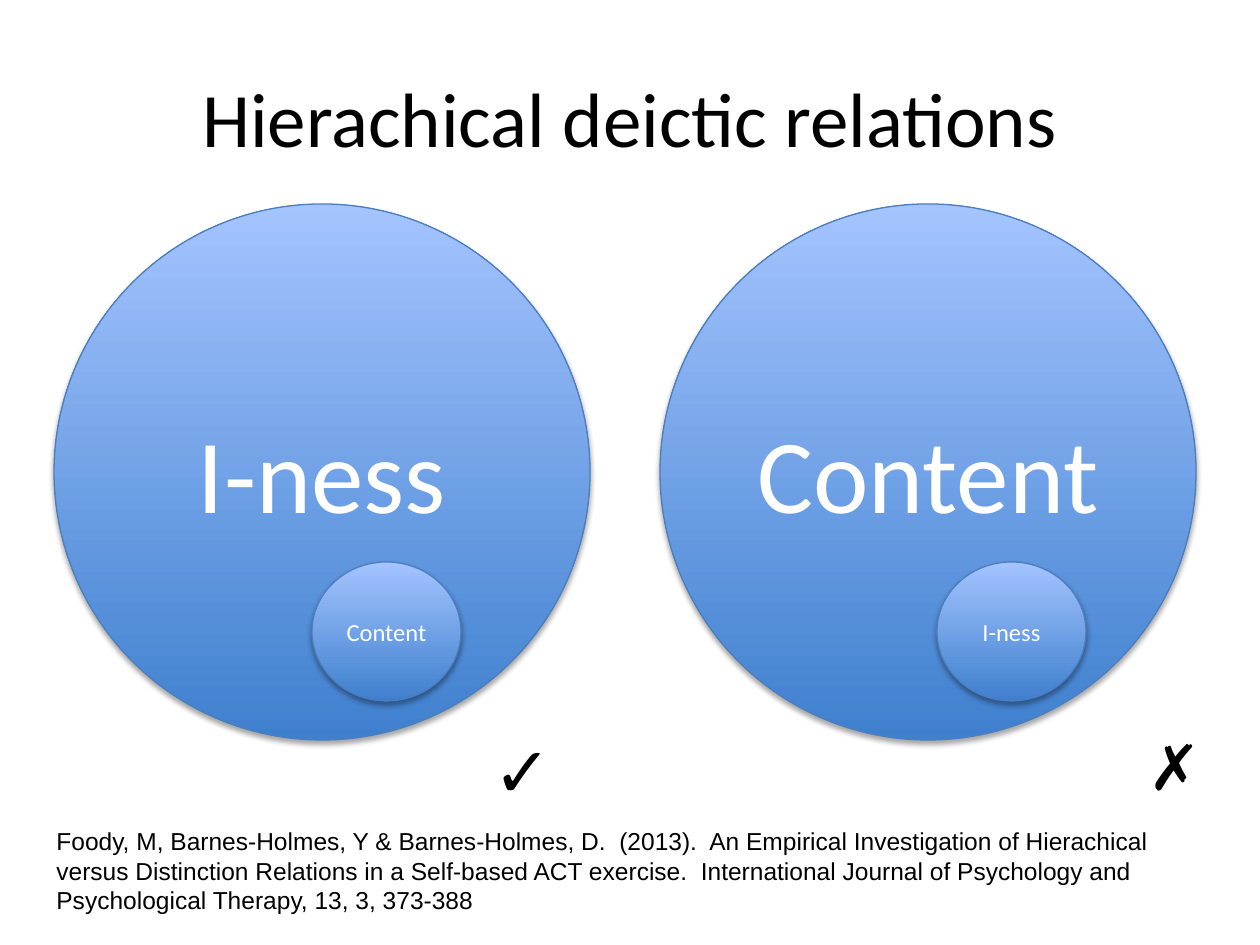
from lxml import etree
from pptx import Presentation
from pptx import util as u
from pptx.dml.color import RGBColor
from pptx.enum import shapes, text
from pptx.oxml import ns

EMU_PER_PX = 914400 / 126
BLACK = RGBColor(0x00, 0x00, 0x00)
WHITE = RGBColor(0xFF, 0xFF, 0xFF)
DEEP_BLUE = RGBColor(0x3F, 0x80, 0xCE)
PALE_BLUE = RGBColor(0xA4, 0xC4, 0xFF)
EDGE_BLUE = RGBColor(0x4B, 0x7E, 0xBC)

CITATION = (
    "Foody, M, Barnes-Holmes, Y & Barnes-Holmes, D.  (2013).  "
    "An Empirical Investigation of Hierachical versus Distinction Relations "
    "in a Self-based ACT exercise.  International Journal of Psychology and "
    "Psychological Therapy, 13, 3, 373-388"
)


def px(*lengths):
    return [u.Emu(round(length * EMU_PER_PX)) for length in lengths]


def write(frame, wording, size, font, color, align, anchor):
    frame.vertical_anchor = anchor
    paragraph = frame.paragraphs[0]
    paragraph.alignment = align
    run = paragraph.add_run()
    run.text = wording
    run.font.size = u.Pt(size)
    run.font.name = font
    run.font.color.rgb = color


def add_label(slide, box, wording, size, font="Arial", wrap=True,
              align=text.PP_ALIGN.LEFT, anchor=text.MSO_ANCHOR.TOP):
    label = slide.shapes.add_textbox(*px(*box))
    label.text_frame.word_wrap = wrap
    write(label.text_frame, wording, size, font, BLACK, align, anchor)


def add_drop_shadow(shape):
    shape.shadow.inherit = False
    effects = shape._element.spPr.find(ns.qn("a:effectLst"))
    shadow = etree.SubElement(
        effects, ns.qn("a:outerShdw"), blurRad=str(u.Pt(3.1)),
        dist=str(u.Pt(1.8)), dir="5400000", rotWithShape="0")
    tint = etree.SubElement(shadow, ns.qn("a:srgbClr"), val="000000")
    etree.SubElement(tint, ns.qn("a:alpha"), val="35000")


def add_circle(slide, box, wording, size):
    circle = slide.shapes.add_shape(shapes.MSO_SHAPE.OVAL, *px(*box))
    circle.fill.gradient()
    circle.fill.gradient_angle = 90
    for stop, position, color in zip(
            circle.fill.gradient_stops, (0, 1), (DEEP_BLUE, PALE_BLUE)):
        stop.position = position
        stop.color.rgb = color
    circle.line.color.rgb = EDGE_BLUE
    circle.line.width = u.Pt(0.75)
    add_drop_shadow(circle)
    write(circle.text_frame, wording, size, "Calibri", WHITE,
          text.PP_ALIGN.CENTER, text.MSO_ANCHOR.MIDDLE)


def main():
    deck = Presentation()
    deck.slide_width, deck.slide_height = px(1260, 945)
    slide = deck.slides.add_slide(deck.slide_layouts[6])

    add_label(slide, (63, 38, 1134, 157), "Hierachical deictic relations", 44,
              font="Calibri", align=text.PP_ALIGN.CENTER,
              anchor=text.MSO_ANCHOR.MIDDLE)
    for left, whole in ((54, "I-ness"), (660, "Content")):
        add_circle(slide, (left, 204, 536, 536), whole, 60)
    for left, part in ((312, "Content"), (937, "I-ness")):
        add_circle(slide, (left, 562, 149, 139), part, 14)
    add_label(slide, (481, 721, 134, 97), "✓", 40)
    add_label(slide, (1136, 721, 63, 89), "✗", 36, wrap=False)
    add_label(slide, (44, 820, 1181, 102), CITATION, 14)

    deck.save("out.pptx")


if __name__ == "__main__":
    main()
